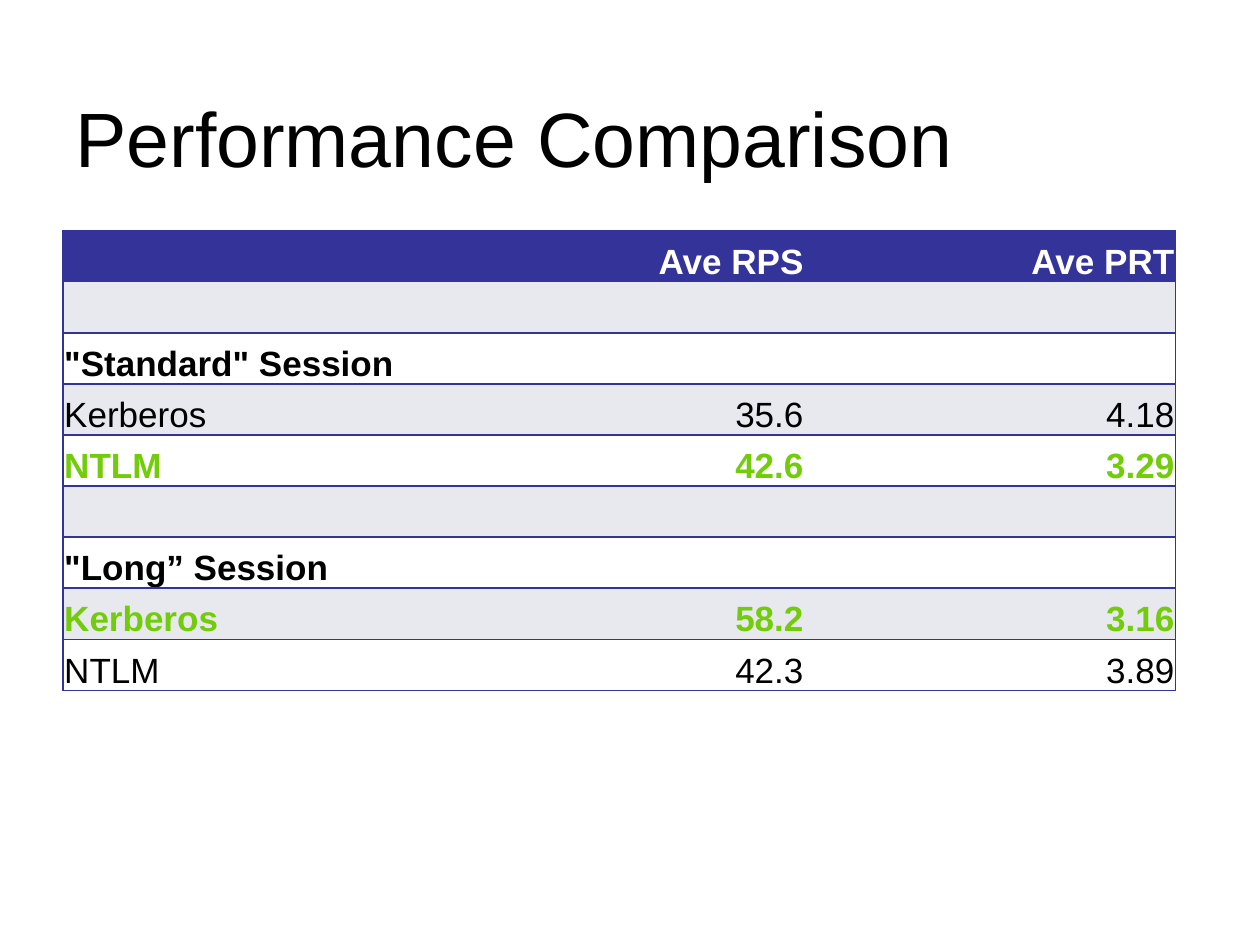
"""Build the performance comparison slide with its table of session results."""
import pptx
import pptx.dml.color
import pptx.enum.text
import pptx.oxml.ns
import pptx.util
from lxml import etree
from pptx.util import Inches

NAVY, GRAY, WHITE, BLACK, GREEN = "333399", "E8E8EF", "FFFFFF", "000000", "72CC09"
TITLE = "Performance Comparison"
ROWS = [
    ("header", ["", "Ave RPS", "Ave PRT"]),
    ("plain", ["", "", ""]),
    ("session", ['"Standard" Session']),
    ("plain", ["Kerberos", "35.6", "4.18"]),
    ("best", ["NTLM", "42.6", "3.29"]),
    ("plain", ["", "", ""]),
    ("session", '"Long” Session'.splitlines()),
    ("best", ["Kerberos", "58.2", "3.16"]),
    ("plain", ["NTLM", "42.3", "3.89"]),
]
TEXT_COLORS = {"header": WHITE, "plain": BLACK, "session": BLACK, "best": GREEN}
COLUMNS = 3
LEFT, WIDTH = 0.5, 8.83
TABLE_TOP, TABLE_HEIGHT = 1.83, 3.65


def color(value):
    return pptx.dml.color.RGBColor.from_string(value)


def write(frame, text, size=20, fill=BLACK, bold=False, align="LEFT"):
    paragraph = frame.paragraphs[0]
    paragraph.alignment = getattr(pptx.enum.text.PP_ALIGN, align)
    run = paragraph.add_run()
    run.text = text
    run.font.name = "Arial"
    run.font.size = pptx.util.Pt(size)
    run.font.bold = bold
    run.font.color.rgb = color(fill)


def set_borders(cell, visible):
    properties = cell._tc.get_or_add_tcPr()
    for side in "LRTB":
        line = etree.SubElement(properties, pptx.oxml.ns.qn(f"a:ln{side}"), w=str(pptx.util.Pt(1)))
        if side in visible:
            solid = etree.SubElement(line, pptx.oxml.ns.qn("a:solidFill"))
            etree.SubElement(solid, pptx.oxml.ns.qn("a:srgbClr"), val=NAVY)
        else:
            etree.SubElement(line, pptx.oxml.ns.qn("a:noFill"))


def add_title(slide):
    box = slide.shapes.add_textbox(Inches(LEFT), Inches(0.67), Inches(WIDTH), Inches(0.83))
    box.text_frame.word_wrap = True
    box.text_frame.vertical_anchor = pptx.enum.text.MSO_ANCHOR.MIDDLE
    write(box.text_frame, TITLE, size=44)


def format_cell(cell, background, sides):
    cell.margin_left = cell.margin_right = cell.margin_top = Inches(0.01)
    cell.margin_bottom = 0
    cell.vertical_anchor = pptx.enum.text.MSO_ANCHOR.BOTTOM
    set_borders(cell, sides)
    cell.fill.solid()
    cell.fill.fore_color.rgb = color(background)


def add_results(slide):
    table = slide.shapes.add_table(
        len(ROWS), COLUMNS, Inches(LEFT), Inches(TABLE_TOP), Inches(WIDTH), Inches(TABLE_HEIGHT)
    ).table
    for row, (kind, texts) in enumerate(ROWS):
        background = NAVY if kind == "header" else GRAY if row % 2 else WHITE
        for column in range(COLUMNS):
            sides = "TB" + ("L" if column == 0 else "") + ("R" if column == COLUMNS - 1 else "")
            if kind == "session":
                sides = "LRTB"
            format_cell(table.cell(row, column), background, sides)
        if kind == "session":
            table.cell(row, 0).merge(table.cell(row, COLUMNS - 1))
        for column, text in enumerate(texts):
            if text:
                write(table.cell(row, column).text_frame, text, fill=TEXT_COLORS[kind],
                      bold=kind != "plain", align="RIGHT" if column else "LEFT")


def main():
    presentation = pptx.Presentation()
    presentation.slide_width, presentation.slide_height = Inches(10), Inches(7.5)
    slide = presentation.slides.add_slide(presentation.slide_layouts[6])
    add_title(slide)
    add_results(slide)
    presentation.save("out.pptx")


if __name__ == "__main__":
    main()
